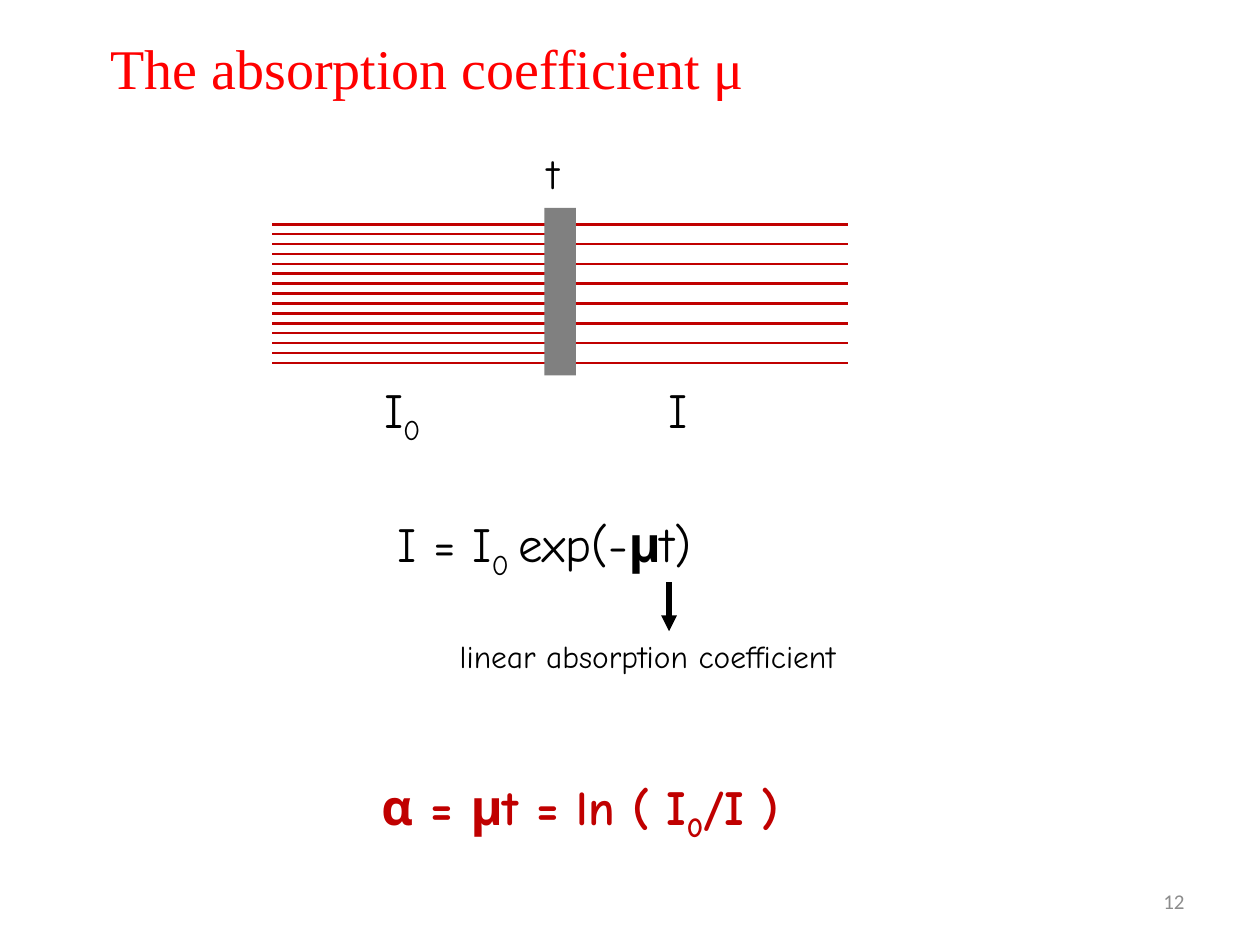
"""Build the slide on the absorption coefficient, with its beam diagram and formulas."""
from dataclasses import dataclass

from lxml import etree
from pptx import Presentation
from pptx.dml.color import RGBColor
from pptx.enum.shapes import MSO_CONNECTOR, MSO_SHAPE
from pptx.enum.text import MSO_ANCHOR, MSO_AUTO_SIZE, PP_ALIGN
from pptx.oxml.ns import qn
from pptx.util import Inches, Pt

LINE = MSO_CONNECTOR.STRAIGHT
RECT = MSO_SHAPE.RECTANGLE
LEFT, MID, RIGHT = PP_ALIGN.LEFT, PP_ALIGN.CENTER, PP_ALIGN.RIGHT
CENTER = MSO_ANCHOR.MIDDLE
FIXED = MSO_AUTO_SIZE.NONE


@dataclass(frozen=True)
class Theme:
    title: str = "FF0000"
    ink: str = "000000"
    ray: str = "C00000"
    slab: str = "808080"
    page: str = "8C8C8C"
    serif: str = "Times New Roman"
    hand: str = "Comic Neue"
    sans: str = "Calibri"
    head: int = 32
    large: int = 28
    mid: int = 24
    note: int = 18
    small: int = 12


theme = Theme()


def write(box, parts, size, color=theme.ink, face=theme.hand, align=LEFT, wrap=True):
    """Fill a box with (text, style) parts, where b is bold and s is subscript."""
    frame = box.text_frame
    frame.auto_size = FIXED
    frame.word_wrap = wrap
    para = frame.paragraphs[0]
    para.alignment = align
    for text, style in parts:
        run = para.add_run()
        run.text = text
        font = run.font
        font.size, font.name, font.bold = Pt(size), face, "b" in style
        font.color.rgb = RGBColor.from_string(color)
        if "s" in style:
            run._r.get_or_add_rPr().set("baseline", "-25000")
    return frame


def draw(x1, y1, x2, y2, color, width):
    """Draw a straight line without a shadow."""
    line = slide.shapes.add_connector(LINE, Inches(x1), Inches(y1), Inches(x2), Inches(y2))
    line.line.color.rgb = RGBColor.from_string(color)
    line.line.width = Pt(width)
    etree.SubElement(line._element.spPr, qn("a:effectLst"))
    return line


deck = Presentation()
deck.slide_width, deck.slide_height = Inches(10), Inches(7.5)
slide = deck.slides.add_slide(deck.slide_layouts[5])

title = slide.shapes.title
title.left, title.top = Inches(0.2), Inches(0.21)
title.width, title.height = Inches(6.39), Inches(0.64)
write(title, [("The absorption coefficient μ", "")], theme.head, theme.title, theme.serif, MID)

top, gap, count = 1.78, 1.1 / 14, 15
for x1, x2, step in ((2.16, 4.37, 1), (4.53, 6.73, 2)):
    for i in range(0, count, step):
        y = top + i * gap
        draw(x1, y, x2, y, theme.ray, 1.5)

slab = slide.shapes.add_shape(RECT, Inches(4.32), Inches(1.65), Inches(0.25), Inches(1.33))
slab.shadow.inherit = False
slab.fill.solid()
slab.fill.fore_color.rgb = RGBColor.from_string(theme.slab)
slab.line.fill.background()

labels = (
    (4.25, 1.12, 0.36, 0.5, theme.mid, False, [("t", "")]),
    (2.95, 2.96, 0.57, 0.57, theme.large, False, [("I", ""), ("0", "s")]),
    (5.21, 2.96, 0.42, 0.57, theme.large, False, [("I", "")]),
    (3.06, 4.03, 2.96, 0.57, theme.large, True,
     [("I = I", ""), ("0 ", "s"), ("exp(-", ""), ("μ", "b"), ("t)", "")]),
    (3.55, 5.01, 3.95, 0.4, theme.note, True, [("linear absorption coefficient", "")]),
)
for x, y, w, h, size, wrap, parts in labels:
    box = slide.shapes.add_textbox(Inches(x), Inches(y), Inches(w), Inches(h))
    write(box, parts, size, wrap=wrap)

arrow = draw(5.31, 4.62, 5.31, 5.01, theme.ink, 3)
etree.SubElement(arrow.line._get_or_add_ln(), qn("a:tailEnd"), type="triangle")

law = slide.shapes.add_textbox(Inches(2.72), Inches(6.11), Inches(3.77), Inches(0.71))
parts = [("α = μt = ln ( I", "b"), ("0", "bs"), ("/I )", "b")]
frame = write(law, parts, theme.large, theme.ray, align=MID)
frame.paragraphs[0].space_before = Pt(5.6)

page = slide.shapes.add_textbox(Inches(7.17), Inches(6.95), Inches(2.33), Inches(0.4))
frame = write(page, [("12", "")], theme.small, theme.page, theme.sans, RIGHT)
frame.vertical_anchor = CENTER

deck.save("out.pptx")
